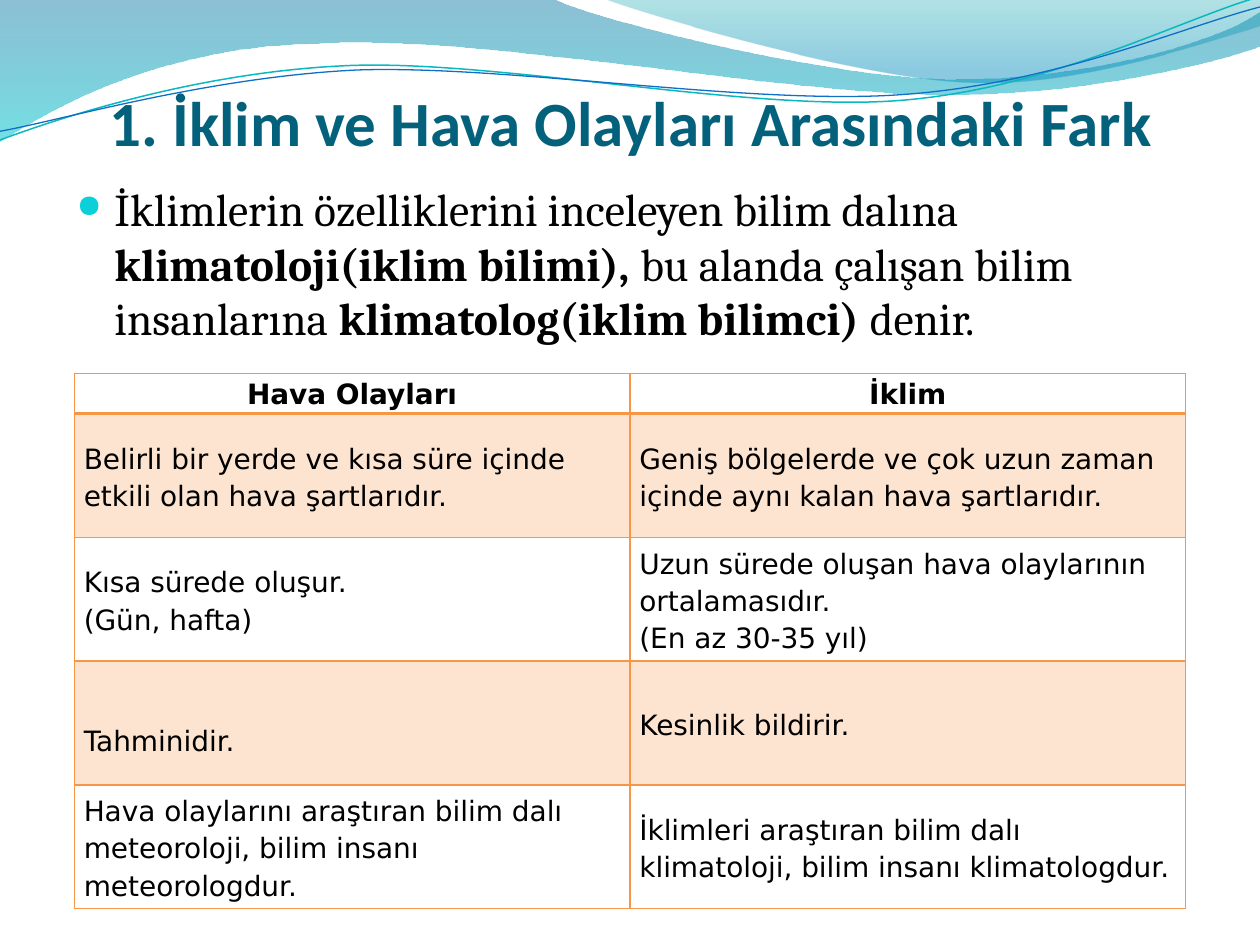
from dataclasses import dataclass

from lxml.etree import SubElement
from pptx import Presentation
from pptx.dml.color import RGBColor
from pptx.enum.text import MSO_ANCHOR, MSO_AUTO_SIZE, PP_ALIGN
from pptx.oxml.ns import qn
from pptx.util import Pt


@dataclass(frozen=True)
class Theme:
    title_font: str = "Calibri"
    body_font: str = "Cambria"
    table_font: str = "DejaVu Sans"
    title_size: float = 36
    body_size: float = 26
    table_size: float = 16
    title: str = "04617B"
    text: str = "000000"
    bullet: str = "0BD0D9"
    border: str = "F79646"
    band: str = "FDE4D0"
    teal_line: str = "0AB8BF"
    blue_line: str = "0F6FC6"
    # gradient stops: position, colour, opacity in percent
    wide_wave: tuple = ((0, "0074A1", 45), (1, "00C6CF", 55))
    right_wave: tuple = ((0, "00A1A9", 30), (0.8, "008BBF", 45))


THEME = Theme()

# Outlines: a start point, then segments of one point (line) or three (curve)
WIDE_WAVE = [
    [(0, 0)], [(317, -0.5)],
    [(343, 12), (478, 45), (546, 45)], [(614, 45), (690, 27), (720, 6.5)],
    [(721, 26)],
    [(708, 32), (626, 55), (537, 54)], [(448, 54), (275, 20), (185, 24.5)],
    [(93, 26), (33, 60), (-0.5, 81)],
]
RIGHT_WAVE = [
    [(345, -0.5)], [(367, 8), (491, 45), (554, 47)],
    [(616, 50), (692, 23), (720, 15)], [(720, 0)],
]
TEAL_CURVE = [
    [(0, 80)], [(35, 67), (114, 41), (199, 37.5)],
    [(284, 34), (427, 64), (513, 57.5)], [(600, 51), (675, 11), (718.5, -1.5)],
]
BLUE_CURVE = [
    [(0, 75)], [(34, 69), (119, 44), (204, 40)],
    [(290, 37), (430, 60.5), (516, 54)], [(602, 48), (677, 15), (720, 4)],
]

TITLE = "1. İklim ve Hava Olayları Arasındaki Fark"
DEFINITION = [
    ("İklimlerin özelliklerini inceleyen bilim dalına ", False),
    ("klimatoloji(iklim bilimi),", True),
    (" bu alanda çalışan bilim insanlarına ", False),
    ("klimatolog(iklim bilimci)", True),
    (" denir.", False),
]
COMPARISON = [
    ("Hava Olayları", "İklim"),
    ("Belirli bir yerde ve kısa süre içinde etkili olan hava şartlarıdır.",
     "Geniş bölgelerde ve çok uzun zaman içinde aynı kalan hava şartlarıdır."),
    ("Kısa sürede oluşur.\n(Gün, hafta)",
     "Uzun sürede oluşan hava olaylarının ortalamasıdır.\n(En az 30-35 yıl)"),
    ("Tahminidir.", "Kesinlik bildirir."),
    ("Hava olaylarını araştıran bilim dalı meteoroloji, bilim insanı meteorologdur.",
     "İklimleri araştıran bilim dalı klimatoloji, bilim insanı klimatologdur."),
]


def format_run(r, font, size, color, bold=False):
    r.font.name = font
    r.font.size = Pt(size)
    r.font.bold = bold
    r.font.color.rgb = RGBColor.from_string(color)


def add_outline(s, outline, close):
    """Freeform whose three-point segments are cubic curves."""
    start, *rest = [(Pt(x), Pt(y)) for segment in outline for x, y in segment]
    builder = s.shapes.build_freeform(*start)
    builder.add_line_segments(rest, close=close)
    sp = builder.convert_to_shape()
    sp.shadow.inherit = False
    lines = sp._element.iter(qn("a:lnTo"))
    lines = iter(list(lines))
    for segment in outline[1:]:
        first, *others = [next(lines) for _ in segment]
        if others:
            first.tag = qn("a:cubicBezTo")
            for line in others:
                first.append(line[0])
                line.getparent().remove(line)
    return sp


def add_wave(s, outline, stops):
    sp = add_outline(s, outline, close=True)
    sp.line.fill.background()
    sp.fill.gradient()
    sp.fill.gradient_angle = 270
    for stop, (position, color, _) in zip(sp.fill.gradient_stops, stops):
        stop.position = position
        stop.color.rgb = RGBColor.from_string(color)
    colors = list(sp._element.spPr.iter(qn("a:srgbClr")))
    for clr, (_, _, opacity) in zip(colors, stops):
        SubElement(clr, qn("a:alpha"), val=str(opacity * 1000))


def add_curve(s, outline, color, width):
    sp = add_outline(s, outline, close=False)
    sp.fill.background()
    sp.line.color.rgb = RGBColor.from_string(color)
    sp.line.width = Pt(width)


def set_title(s):
    sp = s.shapes.title
    s.shapes._spTree.append(sp._element)  # in front of the waves
    sp.left, sp.top, sp.width, sp.height = Pt(36.5), Pt(54.5), Pt(648), Pt(90)
    tf = sp.text_frame
    tf.text = TITLE
    tf.auto_size = MSO_AUTO_SIZE.NONE
    tf.word_wrap = True
    tf.vertical_anchor = MSO_ANCHOR.BOTTOM
    tf.margin_left = tf.margin_right = 0
    tf.margin_bottom = Pt(53.8)
    p = tf.paragraphs[0]
    p.alignment = PP_ALIGN.CENTER
    format_run(p.runs[0], THEME.title_font, THEME.title_size, THEME.title, True)


def add_bullet(p, indent):
    pPr = p._p.get_or_add_pPr()
    pPr.set("marL", str(Pt(indent)))
    pPr.set("indent", str(-Pt(indent)))
    SubElement(SubElement(pPr, qn("a:buClr")), qn("a:srgbClr"), val=THEME.bullet)
    SubElement(pPr, qn("a:buSzPct"), val="70000")
    SubElement(pPr, qn("a:buChar"), char="●")


def add_definition(s):
    tf = s.shapes.add_textbox(Pt(36.75), Pt(100), Pt(648), Pt(102)).text_frame
    tf.word_wrap = True
    p = tf.paragraphs[0]
    p.space_before = Pt(5.2)
    add_bullet(p, 21.6)
    for text, bold in DEFINITION:
        r = p.add_run()
        r.text = text
        format_run(r, THEME.body_font, THEME.body_size, THEME.text, bold)


def set_borders(cell, **widths):
    tcPr = cell._tc.get_or_add_tcPr()
    for side in "LRTB":
        ln = SubElement(tcPr, qn(f"a:ln{side}"), w=str(Pt(widths.get(side, 1))))
        SubElement(SubElement(ln, qn("a:solidFill")), qn("a:srgbClr"), val=THEME.border)


def fill_cell(cell, text, row):
    header = row == 0
    set_borders(cell, B=2.25 if header else 1, T=2.25 if row == 1 else 1)
    if row % 2:
        cell.fill.solid()
        cell.fill.fore_color.rgb = RGBColor.from_string(THEME.band)
    else:
        cell.fill.background()
    cell.margin_left = cell.margin_right = Pt(5.4)
    cell.margin_top = cell.margin_bottom = 0
    cell.vertical_anchor = MSO_ANCHOR.TOP if header else MSO_ANCHOR.MIDDLE
    cell.text_frame.text = text
    for p in cell.text_frame.paragraphs:
        p.line_spacing = 1.15
        if header:
            p.alignment = PP_ALIGN.CENTER
            p.space_after = Pt(6)
        format_run(p.runs[0], THEME.table_font, THEME.table_size, THEME.text, header)


def add_comparison(s):
    table = s.shapes.add_table(len(COMPARISON), 2, Pt(42.5), Pt(213.4),
                               Pt(635), Pt(306)).table
    table.first_row = table.horz_banding = False
    for row, texts in enumerate(COMPARISON):
        table.rows[row].height = Pt(70.75 if row else 23)
        for col, text in enumerate(texts):
            fill_cell(table.cell(row, col), text, row)
    table.cell(3, 0).margin_top = Pt(18.7)  # sits lower than its neighbour


def main():
    prs = Presentation()
    prs.slide_width, prs.slide_height = Pt(720), Pt(540)
    s = prs.slides.add_slide(prs.slide_layouts[5])
    add_wave(s, WIDE_WAVE, THEME.wide_wave)
    add_wave(s, RIGHT_WAVE, THEME.right_wave)
    add_curve(s, TEAL_CURVE, THEME.teal_line, 0.85)
    add_curve(s, BLUE_CURVE, THEME.blue_line, 0.75)
    set_title(s)
    add_definition(s)
    add_comparison(s)
    prs.save("out.pptx")


if __name__ == "__main__":
    main()
